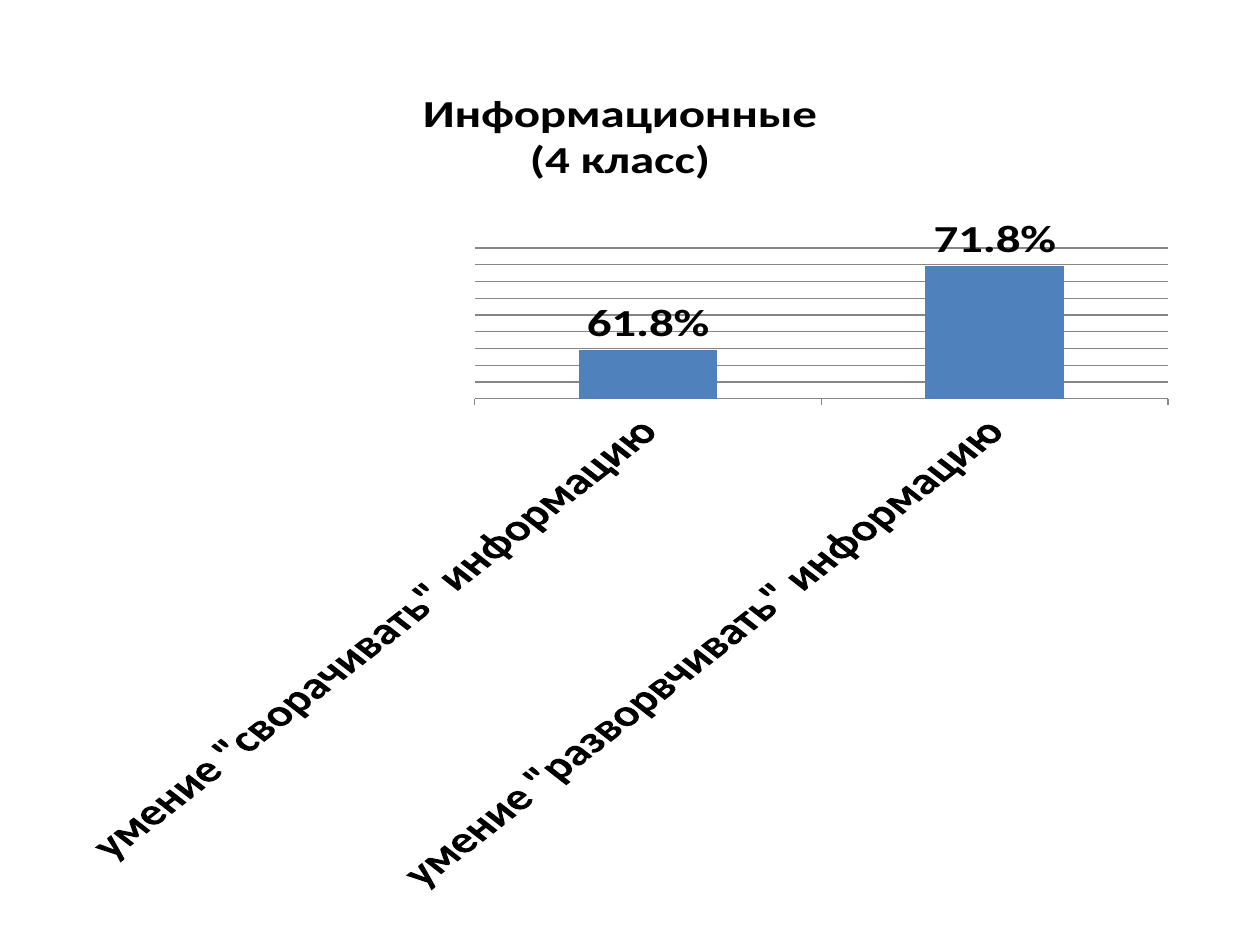
from dataclasses import dataclass

from pptx import Presentation
from pptx import util as u
from pptx.chart.data import CategoryChartData
from pptx.dml.color import RGBColor
from pptx.enum import chart as ch

PX = u.Inches(1) // 126
FONT = "Calibri"
BLACK, BAR_BLUE, AXIS_GRAY = "000000", "4F81BD", "868686"
PERCENT = "0.0%"


@dataclass
class Skill:
    name: str
    share: float


SKILLS = [
    Skill('умение "сворачивать" информацию', 0.618),
    Skill('умение "разворвчивать" информацию', 0.718),
]
# The title ends with an open line, as the chart's own text does
TITLE_LINES = ["Информационные", "(4 класс)", ""]


def color(value: str) -> RGBColor:
    return RGBColor.from_string(value)


def style_font(font, size: int, bold: bool) -> None:
    font.name, font.size, font.bold = FONT, u.Pt(size), bold
    font.color.rgb = color(BLACK)


def style_line(line) -> None:
    line.color.rgb = color(AXIS_GRAY)
    line.width = u.Pt(0.75)


def add_title(chart, lines: list[str]) -> None:
    chart.has_title = True
    frame = chart.chart_title.text_frame
    for index, line in enumerate(lines):
        paragraph = frame.add_paragraph() if index else frame.paragraphs[0]
        style_font(paragraph.font, 28, True)
        run = paragraph.add_run()
        run.text = line
        style_font(run.font, 28, True)
    chart.chart_title.include_in_layout = False


def add_skill_chart(slide, skills: list[Skill]) -> None:
    data = CategoryChartData(number_format=PERCENT)
    data.categories = [skill.name for skill in skills]
    data.add_series("Series 1", [skill.share for skill in skills])
    chart = slide.shapes.add_chart(
        ch.XL_CHART_TYPE.COLUMN_CLUSTERED,
        49 * PX, 69 * PX, 1142 * PX, 827 * PX, data).chart
    style_font(chart.font, 10, False)
    chart.has_legend = False
    add_title(chart, TITLE_LINES)

    # Columns and their labels
    plot = chart.plots[0]
    plot.vary_by_categories = False
    plot.gap_width = 150
    fill = plot.series[0].format.fill
    fill.solid()
    fill.fore_color.rgb = color(BAR_BLUE)
    plot.has_data_labels = True
    labels = plot.data_labels
    labels.show_value = True
    labels.number_format, labels.number_format_is_linked = PERCENT, False
    labels.position = ch.XL_LABEL_POSITION.OUTSIDE_END
    style_font(labels.font, 28, True)

    # Skill names, slanted automatically for lack of room
    names = chart.category_axis
    names.major_tick_mark = ch.XL_TICK_MARK.OUTSIDE
    style_line(names.format.line)
    style_font(names.tick_labels.font, 28, True)

    # Hidden share axis with its grid
    shares = chart.value_axis
    shares.minimum_scale, shares.maximum_scale, shares.major_unit = 0.56, 0.74, 0.02
    shares.tick_labels.number_format = PERCENT
    shares.tick_labels.number_format_is_linked = False
    shares.has_major_gridlines = True
    style_line(shares.major_gridlines.format.line)
    shares.visible = False


def main() -> None:
    deck = Presentation()
    deck.slide_width, deck.slide_height = 1260 * PX, 945 * PX
    slide = deck.slides.add_slide(deck.slide_layouts[6])
    add_skill_chart(slide, SKILLS)
    deck.save("out.pptx")


if __name__ == "__main__":
    main()
